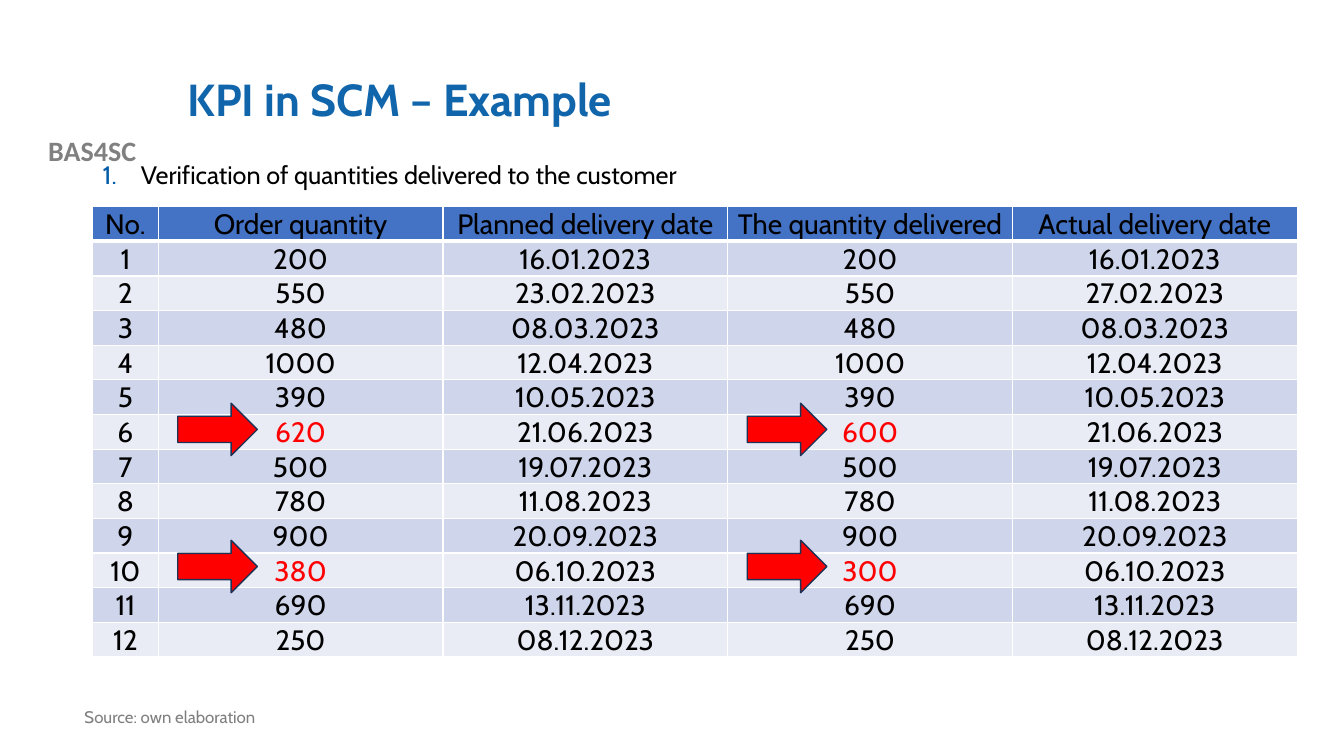
from lxml import etree
from pptx import Presentation
from pptx.dml.color import RGBColor
from pptx.enum.shapes import MSO_SHAPE
from pptx.enum.text import MSO_ANCHOR, PP_ALIGN
from pptx.oxml.ns import qn
from pptx.util import Inches, Pt

COLORS = {
    "title": "1065AB", "number": "015BA6", "tag": "808080", "source": "7F7F7F",
    "text": "000000", "alert": "FF0000", "outline": "1E3256", "rule": "FFFFFF",
    "header": "4472C4", "odd": "CFD5EA", "even": "E9EBF5",
}
FONT = "Cabin"
LEFT, CENTER, JUSTIFY = PP_ALIGN.LEFT, PP_ALIGN.CENTER, PP_ALIGN.JUSTIFY
TOP, MIDDLE, BOTTOM = MSO_ANCHOR.TOP, MSO_ANCHOR.MIDDLE, MSO_ANCHOR.BOTTOM
RIGHT_ARROW = MSO_SHAPE.RIGHT_ARROW
SLIDE_W, SLIDE_H = Inches(13.33), Inches(7.5)
COL, ROW = SLIDE_W / 40, SLIDE_H / 22.5

HEADERS = ["No.", "Order quantity", "Planned delivery date",
           "The quantity delivered", "Actual delivery date"]
ORDERS = [
    (200, "16.01.2023"), (550, "23.02.2023"), (480, "08.03.2023"),
    (1000, "12.04.2023"), (390, "10.05.2023"), (620, "21.06.2023"),
    (500, "19.07.2023"), (780, "11.08.2023"), (900, "20.09.2023"),
    (380, "06.10.2023"), (690, "13.11.2023"), (250, "08.12.2023"),
]
DELIVERED = {6: 600, 10: 300}
DELIVERY_DATES = {2: "27.02.2023"}
QUANTITY_COLUMNS = (1, 3)
NUMBER_WIDTH = 1.95


def rgb(name):
    return RGBColor.from_string(COLORS[name])


def grid(x, y, w, h):
    return round(x * COL), round(y * ROW), round(w * COL), round(h * ROW)


def style(p, size, color, font=FONT, bold=False, align=LEFT):
    p.alignment = align
    for r in p.runs:
        r.font.size, r.font.name, r.font.bold = Pt(size), font, bold
        r.font.color.rgb = rgb(color)


def add_text(s, box, text, size, color, anchor=TOP, spacing=0.9, **look):
    tf = s.shapes.add_textbox(*grid(*box)).text_frame
    tf.word_wrap = True
    tf.vertical_anchor = anchor
    p = tf.paragraphs[0]
    p.text = text
    p.line_spacing = spacing
    style(p, size, color, **look)
    return p


def add_numbered(s, box, text):
    p = add_text(s, box, text, 18, "text", align=JUSTIFY)
    pPr = p._p.get_or_add_pPr()
    pPr.set("marL", str(Inches(0.38)))
    pPr.set("indent", str(-Inches(0.38)))
    clr = etree.SubElement(pPr, qn("a:buClr"))
    etree.SubElement(clr, qn("a:srgbClr"), val=COLORS["number"])
    etree.SubElement(pPr, qn("a:buAutoNum"), type="arabicPeriod")


def add_borders(cell, bottom):
    tcPr = cell._tc.get_or_add_tcPr()
    for side, width in zip("LRTB", (1, 1, 1, bottom)):
        ln = etree.SubElement(tcPr, qn("a:ln" + side), w=str(Pt(width)))
        fill = etree.SubElement(ln, qn("a:solidFill"))
        etree.SubElement(fill, qn("a:srgbClr"), val=COLORS["rule"])


def fill_cell(cell, text, fill, color, anchor, bottom):
    add_borders(cell, bottom)
    cell.fill.solid()
    cell.fill.fore_color.rgb = rgb(fill)
    cell.margin_left = cell.margin_right = cell.margin_top = Inches(0.01)
    cell.margin_bottom = 0
    cell.vertical_anchor = anchor
    p = cell.text_frame.paragraphs[0]
    p.text = str(text)
    style(p, 20, color, align=CENTER)


def add_orders(s, box):
    rows = [HEADERS] + [
        [n, quantity, date, DELIVERED.get(n, quantity), DELIVERY_DATES.get(n, date)]
        for n, (quantity, date) in enumerate(ORDERS, 1)
    ]
    x, y, w, h = box
    row_h = h / len(rows)
    col_w = (w - NUMBER_WIDTH) / (len(HEADERS) - 1)
    table = s.shapes.add_table(len(rows), len(HEADERS), *grid(*box)).table
    table.first_row = table.horz_banding = False
    for j, column in enumerate(table.columns):
        column.width = round((col_w if j else NUMBER_WIDTH) * COL)
    for i, values in enumerate(rows):
        table.rows[i].height = round(row_h * ROW)
        fill = "header" if i == 0 else "odd" if i % 2 else "even"
        for j, value in enumerate(values):
            short = i in DELIVERED and j in QUANTITY_COLUMNS
            fill_cell(table.cell(i, j), value, fill, "alert" if short else "text",
                      BOTTOM if j > 2 else MIDDLE, 1 if i else 3)
    for i in DELIVERED:
        for j in QUANTITY_COLUMNS:
            left = x + NUMBER_WIDTH + (j - 1) * col_w
            add_arrow(s, (left, y + i * row_h, col_w, row_h))


def add_arrow(s, box):
    x, y, w, h = box
    arrow_w, arrow_h = 2.37, 1.56
    sp = s.shapes.add_shape(
        RIGHT_ARROW, *grid(x + 0.58, y + (h - arrow_h) / 2, arrow_w, arrow_h))
    sp.shadow.inherit = False
    sp.fill.solid()
    sp.fill.fore_color.rgb = rgb("alert")
    sp.line.color.rgb = rgb("outline")
    sp.line.width = Pt(1)


def main():
    prs = Presentation()
    prs.slide_width, prs.slide_height = SLIDE_W, SLIDE_H
    s = prs.slides.add_slide(prs.slide_layouts[6])
    add_text(s, (0, 3.84, 5.49, 1.32), "BAS4SC", 20, "tag",
             spacing=1.0, font="Calibri", bold=True, align=CENTER)
    add_text(s, (5.28, 1.2, 31.98, 3.66), "KPI in SCM – Example", 32, "title",
             anchor=MIDDLE, bold=True)
    add_numbered(s, (2.76, 4.71, 36.69, 3.42),
                 "Verification of quantities delivered to the customer")
    add_text(s, (2.22, 20.94, 15.03, 1.56), "Source: own elaboration", 12, "source")
    add_orders(s, (2.76, 6.15, 35.85, 13.26))
    prs.save("out.pptx")


if __name__ == "__main__":
    main()
